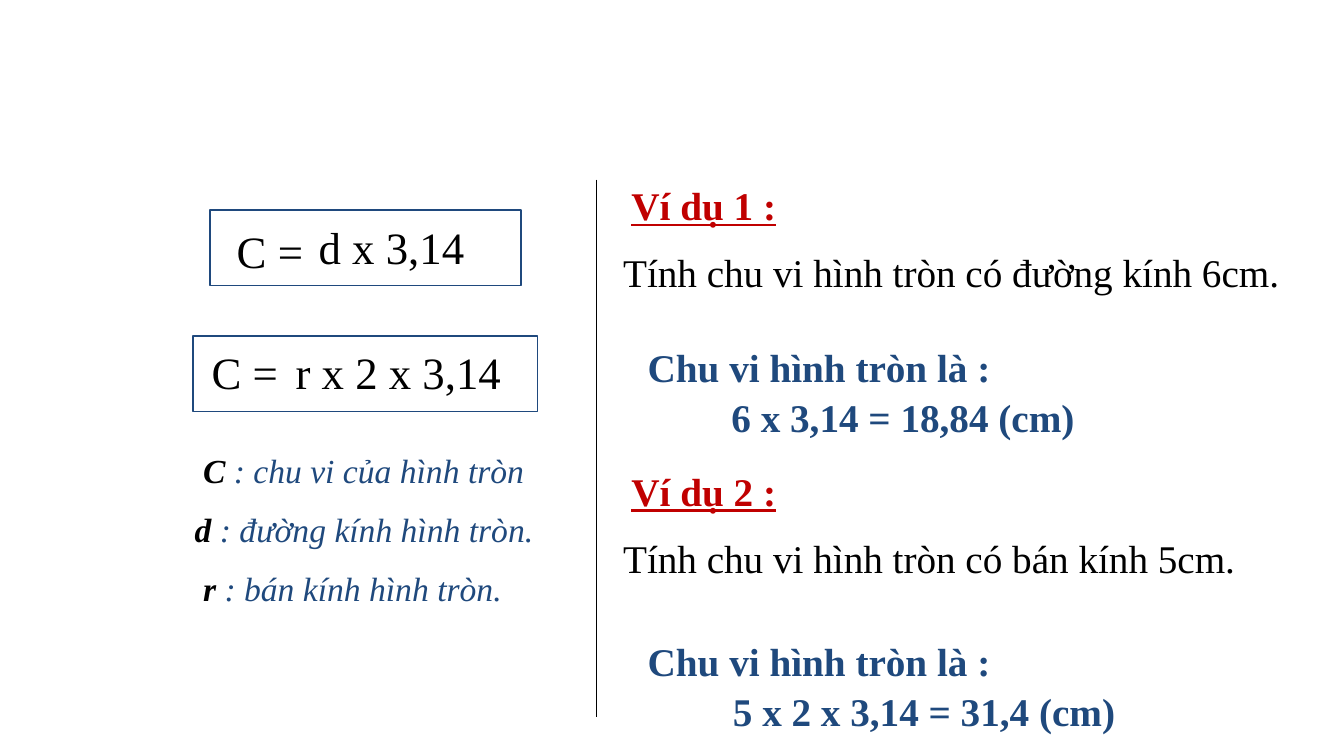
from lxml.etree import SubElement
from pptx import Presentation
from pptx.dml.color import RGBColor
from pptx.enum.shapes import MSO_CONNECTOR as Connector, MSO_SHAPE as Shape
from pptx.enum.text import MSO_AUTO_SIZE as AutoSize, PP_ALIGN as Align
from pptx.oxml.ns import qn
from pptx.util import Pt

FONT = "Times New Roman"
COLORS = {"black": "000000", "blue": "1F497D", "red": "C00000"}
PX = 9525  # EMU per px, 96 px to the inch

# Each formula: frame (left, top, width, height), then (text, left, top, width)
FORMULAS = [
    ((200, 200, 296, 72), [("C =", 216, 208, 120), ("d x 3,14", 294, 205, 208)]),
    ((184, 320, 328, 72), [("C =", 192, 324, 120), ("r x 2 x 3,14", 272, 324, 272)]),
]
# Symbol, meaning, left, width
LEGEND = [
    ("C ", ": chu vi của hình tròn", 184, 352),
    ("d", " : đường kính hình tròn.", 176, 376),
    ("r", " : bán kính hình tròn.", 184, 352),
]
LEGEND_TOP, LEGEND_PITCH = 424, 56
DIVIDER_X, DIVIDER_TOP, DIVIDER_BOTTOM = 568, 171, 683
ANSWER = "Chu vi hình tròn là :"
EXAMPLES = [
    {"top": 168, "heading": "Ví dụ 1 :",
     "question": "Tính chu vi hình tròn có đường kính 6cm.", "question_width": 656,
     "answer_top": 322, "working": "6 x 3,14 = 18,84 (cm)", "working_at": (640, 440)},
    {"top": 440, "heading": "Ví dụ 2 :",
     "question": "Tính chu vi hình tròn có bán kính 5cm.", "question_width": 640,
     "answer_top": 602, "working": "5 x 2 x 3,14 = 31,4 (cm)", "working_at": (648, 464)},
]
QUESTION_DROP, WORKING_DROP = 64, 48
LINE_HEIGHT = {24: 48, 28: 55, 32: 61}  # box height in px by text size in pt


def px(*lengths):
    return [length * PX for length in lengths]


def rgb(name):
    return RGBColor.from_string(COLORS[name])


def add_text(slide, runs, left, top, width, size, align=Align.LEFT, **style):
    """Add a one-line text box; runs is a list of (text, color, bold)."""
    box = slide.shapes.add_textbox(*px(left, top, width, LINE_HEIGHT[size]))
    frame = box.text_frame
    frame.word_wrap = True
    frame.auto_size = AutoSize.SHAPE_TO_FIT_TEXT
    paragraph = frame.paragraphs[0]
    paragraph.alignment = align
    paragraph.font.name = FONT
    paragraph.font.size = Pt(size)
    for attribute, value in style.items():
        setattr(paragraph.font, attribute, value)
    for text, color, bold in runs:
        run = paragraph.add_run()
        run.text = text
        run.font.color.rgb = rgb(color)
        run.font.bold = bold


def add_formula(slide, frame_box, parts):
    for text, left, top, width in parts:
        add_text(slide, [(text, "black", False)], left, top, width, 32)
    frame = slide.shapes.add_shape(Shape.RECTANGLE, *px(*frame_box))
    frame.shadow.inherit = False
    frame.fill.background()
    frame.line.color.rgb = rgb("blue")
    frame.line.width = Pt(1.25)


def add_divider(slide):
    divider = slide.shapes.add_connector(
        Connector.STRAIGHT, *px(DIVIDER_X, DIVIDER_TOP, DIVIDER_X, DIVIDER_BOTTOM))
    divider.line.color.rgb = rgb("black")
    divider.line.width = Pt(0.75)
    SubElement(divider._element.spPr, qn("a:effectLst"))


def add_example(slide, example):
    top, answer_top = example["top"], example["answer_top"]
    working_left, working_width = example["working_at"]
    add_text(slide, [(example["heading"], "red", True)], 592, top, 200, 28, underline=True)
    add_text(slide, [(example["question"], "black", False)],
             584, top + QUESTION_DROP, example["question_width"], 28)
    add_text(slide, [(ANSWER, "blue", True)], 560, answer_top, 440, 28, Align.CENTER)
    add_text(slide, [(example["working"], "blue", True)],
             working_left, answer_top + WORKING_DROP, working_width, 28, Align.CENTER)


def main():
    deck = Presentation()
    deck.slide_width, deck.slide_height = px(1280, 720)
    slide = deck.slides.add_slide(deck.slide_layouts[6])
    for frame_box, parts in FORMULAS:
        add_formula(slide, frame_box, parts)
    for row, (symbol, meaning, left, width) in enumerate(LEGEND):
        add_text(slide, [(symbol, "black", True), (meaning, "blue", False)],
                 left, LEGEND_TOP + row * LEGEND_PITCH, width, 24, italic=True)
    add_divider(slide)
    for example in EXAMPLES:
        add_example(slide, example)
    deck.save("out.pptx")


if __name__ == "__main__":
    main()
